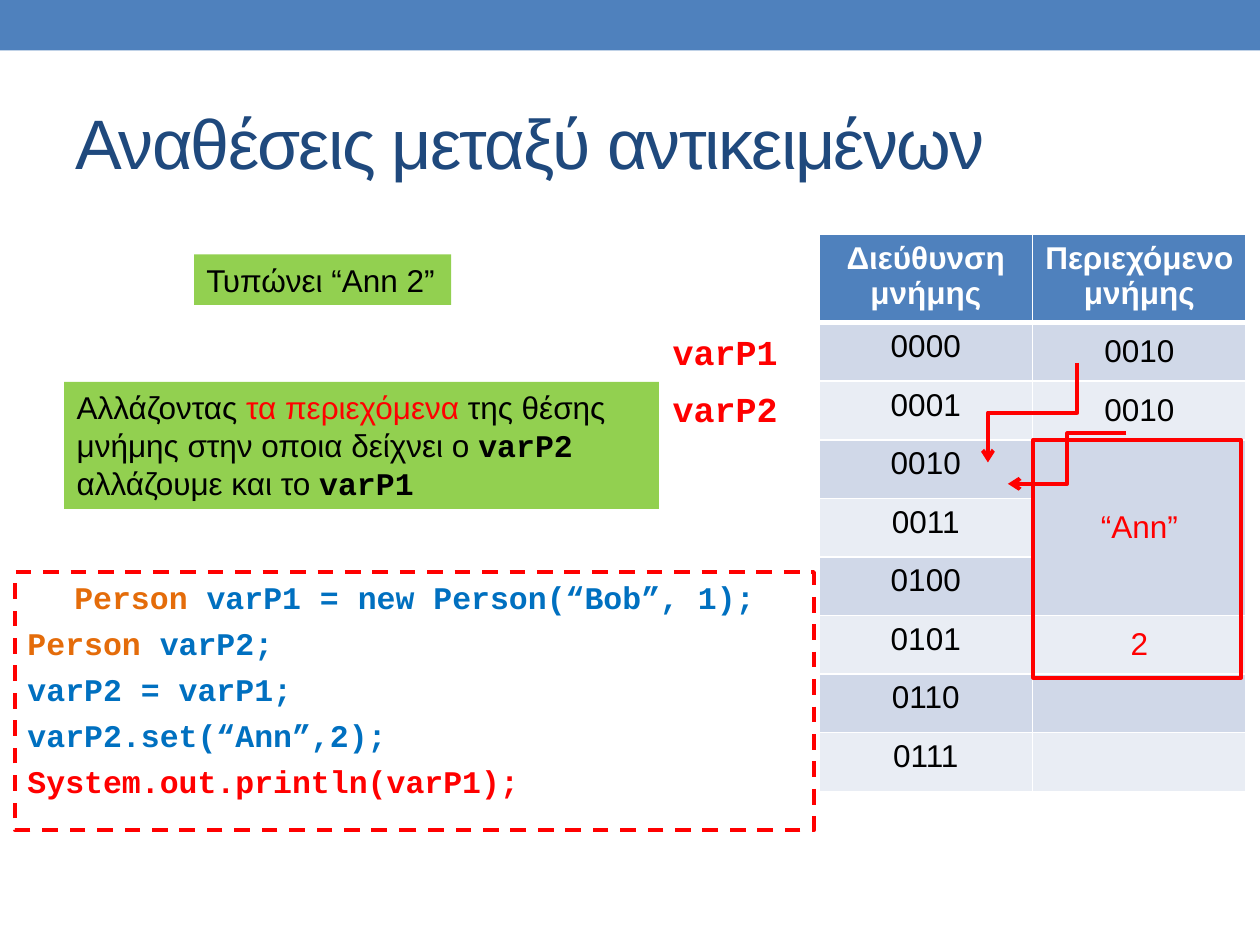
"""Build the slide on assignments between objects."""
import lxml.etree
import pptx
import pptx.dml.color
import pptx.enum.dml
import pptx.enum.shapes
import pptx.enum.text
import pptx.oxml
import pptx.oxml.ns
import pptx.util

Inches = pptx.util.Inches
Pt = pptx.util.Pt
qn = pptx.oxml.ns.qn
RED, BLACK, WHITE, BLUE = "FF0000", "000000", "FFFFFF", "4F81BD"
GREEN, ORANGE, CODE_BLUE = "92D050", "E46C0A", "0070C0"
RECTANGLE = pptx.enum.shapes.MSO_SHAPE.RECTANGLE
ANCHOR = pptx.enum.text.MSO_ANCHOR


def color(value):
    return pptx.dml.color.RGBColor.from_string(value)


def add_runs(paragraph, runs, size=18, font="Arial", bold=False):
    paragraph.alignment = paragraph.alignment or pptx.enum.text.PP_ALIGN.LEFT
    for text, value, *code in runs:
        run = paragraph.add_run()
        run.text = text
        run.font.size = Pt(size)
        run.font.name = "Courier New" if code else font
        run.font.bold = bool(code) or bold
        run.font.color.rgb = color(value)


presentation = pptx.Presentation()
presentation.slide_width = Inches(10)
presentation.slide_height = Inches(7.5)
slide = presentation.slides.add_slide(presentation.slide_layouts[6])
shapes = slide.shapes

band = shapes.add_shape(RECTANGLE, 0, 0, Inches(10), Inches(0.4))
band.shadow.inherit = False
band.fill.solid()
band.fill.fore_color.rgb = color(BLUE)
band.line.fill.background()

title = shapes.add_textbox(Inches(0.5), Inches(0.58), Inches(9), Inches(1.08))
title.text_frame.word_wrap = True
title.text_frame.vertical_anchor = ANCHOR.MIDDLE
title_paragraph = title.text_frame.paragraphs[0]
add_runs(title_paragraph, [("Αναθέσεις μεταξύ αντικειμένων", "1F497D")], size=40)
title_paragraph.runs[0].font._element.set("spc", "-100")

code_box = shapes.add_shape(RECTANGLE, Inches(0.12), Inches(4.54), Inches(6.34), Inches(2.05))
code_box.shadow.inherit = False
code_box.fill.background()
code_box.line.color.rgb = color(RED)
code_box.line.width = Pt(2.25)
code_box.line.dash_style = pptx.enum.dml.MSO_LINE.DASH
code_box.text_frame.word_wrap = True
code_box.text_frame.vertical_anchor = ANCHOR.TOP
code_lines = [
    [("Person ", ORANGE), ("varP1 = new Person(“Bob”, 1);", CODE_BLUE)],
    [("Person ", ORANGE), ("varP2;", CODE_BLUE)],
    [("varP2 = varP1;", CODE_BLUE)],
    [("varP2.set(“Ann”,2);", CODE_BLUE)],
    [("System.out.println(varP1);", RED)],
]
for index, runs in enumerate(code_lines):
    frame = code_box.text_frame
    paragraph = frame.add_paragraph() if index else frame.paragraphs[0]
    paragraph.space_before = Pt(4.7)
    add_runs(paragraph, runs, font="Courier New", bold=True)

memory_rows = [
    ("Διεύθυνση μνήμης", "Περιεχόμενο μνήμης"),
    ("0000", "0010"),
    ("0001", "0010"),
    ("0010", "“Ann”"),
    ("0011", ""),
    ("0100", ""),
    ("0101", "2"),
    ("0110", ""),
    ("0111", ""),
]
table = shapes.add_table(
    len(memory_rows), 2, Inches(6.5), Inches(1.86), Inches(3.39), Inches(4.37)
).table
for row_index, texts in enumerate(memory_rows):
    header = row_index == 0
    table.rows[row_index].height = Inches(0.65) if header else Inches(3.72) // 8
    for column_index, text in enumerate(texts):
        cell = table.cell(row_index, column_index)
        properties = cell._tc.get_or_add_tcPr()
        for side in "LRTB":
            thick = (side, row_index) in (("B", 0), ("T", 1))
            border = lxml.etree.SubElement(properties, qn(f"a:ln{side}"), w=str(Pt(3 if thick else 1)))
            fill = lxml.etree.SubElement(border, qn("a:solidFill"))
            lxml.etree.SubElement(fill, qn("a:srgbClr"), val=WHITE)
        cell.fill.solid()
        cell.fill.fore_color.rgb = color(BLUE if header else ("E9EDF4", "D0D8E8")[row_index % 2])
        if column_index and not header:
            cell.vertical_anchor = ANCHOR.MIDDLE
        if text:
            value = WHITE if header else RED if text in ("“Ann”", "2") else BLACK
            paragraph = cell.text_frame.paragraphs[0]
            paragraph.alignment = pptx.enum.text.PP_ALIGN.CENTER
            add_runs(paragraph, [(text, value)], bold=header)
table.cell(3, 1).merge(table.cell(5, 1))

for name, top in (("varP1", 2.57), ("varP2", 3.03)):
    label = shapes.add_textbox(Inches(5.24), Inches(top), Inches(1.04), Inches(0.44))
    label.text_frame.word_wrap = False
    add_runs(label.text_frame.paragraphs[0], [(name, RED, "code")], size=20)

for left, top, right, bottom, turn in ((7.8, 2.92, 8.59, 3.63, 90), (8.94, 3.44, 8, 3.84, 0)):
    pointer = shapes.add_connector(
        pptx.enum.shapes.MSO_CONNECTOR.ELBOW,
        Inches(left), Inches(top), Inches(right), Inches(bottom),
    )
    pointer.line.color.rgb = color(RED)
    pointer.line.width = Pt(2.25)
    properties = pointer._element.spPr
    if turn:
        properties.find(qn("a:xfrm")).set("rot", str(turn * 60000))
    lxml.etree.SubElement(properties.find(qn("a:ln")), qn("a:tailEnd"), type="arrow")
    lxml.etree.SubElement(properties, qn("a:effectLst"))

notes = [
    (1.54, 2.02, 2.04, 0.4, False, [("Τυπώνει “Ann 2”", BLACK)]),
    (0.51, 3.03, 4.72, 1.01, True, [
        ("Αλλάζοντας ", BLACK),
        ("τα περιεχόμενα ", RED),
        ("της θέσης μνήμης στην οποια δείχνει ο ", BLACK),
        ("varP2 ", BLACK, "code"),
        ("αλλάζουμε και το ", BLACK),
        ("varP1", BLACK, "code"),
    ]),
]
for left, top, width, height, wrap, runs in notes:
    note = shapes.add_textbox(Inches(left), Inches(top), Inches(width), Inches(height))
    note.fill.solid()
    note.fill.fore_color.rgb = color(GREEN)
    note.text_frame.word_wrap = wrap
    add_runs(note.text_frame.paragraphs[0], runs)

object_frame = shapes.add_shape(RECTANGLE, Inches(8.2), Inches(3.49), Inches(1.65), Inches(1.89))
object_frame.shadow.inherit = False
object_frame.fill.background()
object_frame.line.color.rgb = color(RED)
object_frame.line.width = Pt(2.08)

presentation.save("out.pptx")
